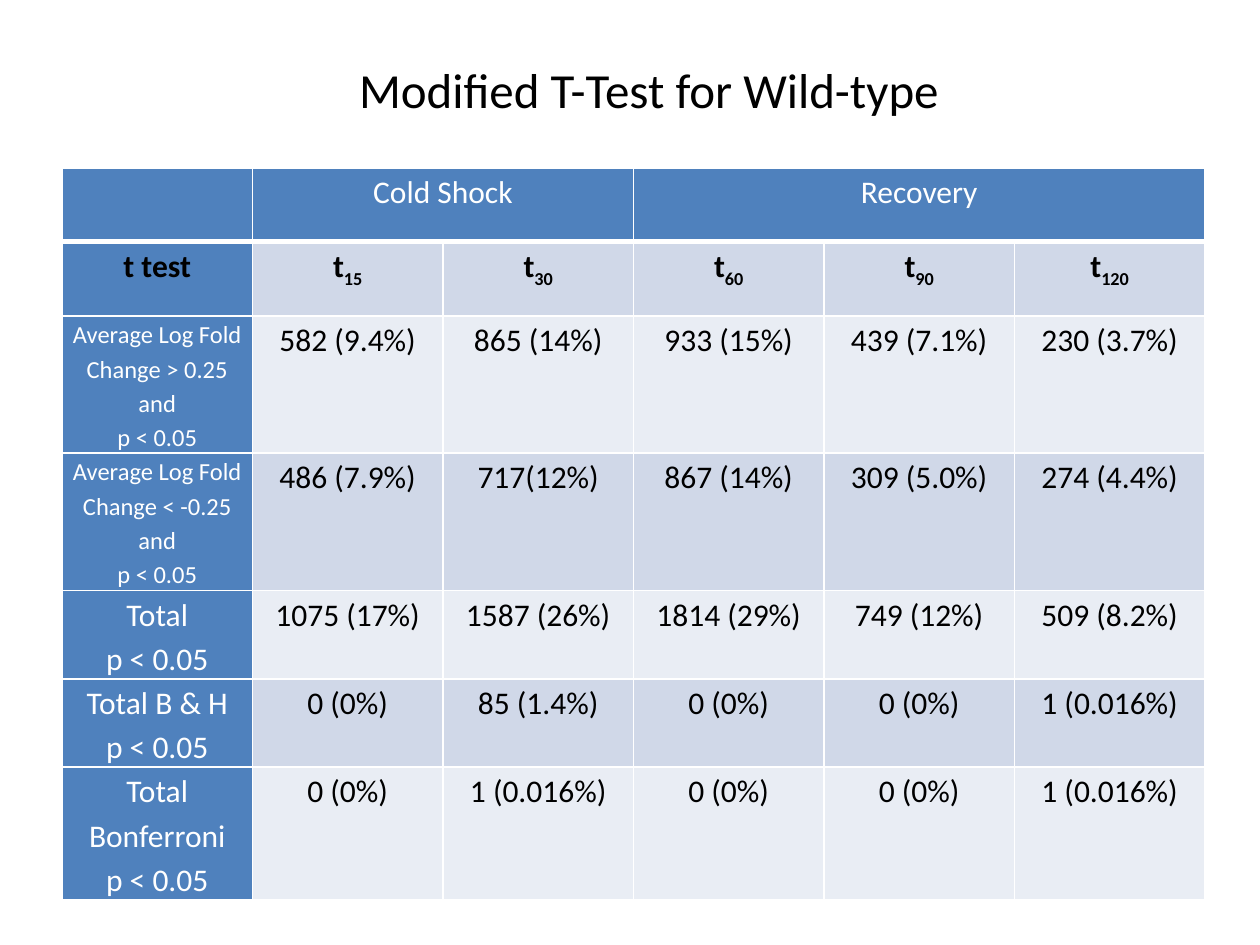
"""Build a slide with a table of modified t-test results for wild-type."""
from lxml import etree
from pptx import Presentation
from pptx.dml.color import RGBColor
from pptx.enum.text import MSO_AUTO_SIZE, PP_ALIGN
from pptx.oxml.ns import qn
from pptx.util import Cm, Pt

CENTER = PP_ALIGN.CENTER
FIT_SHAPE = MSO_AUTO_SIZE.SHAPE_TO_FIT_TEXT
WHITE = RGBColor(0xFF, 0xFF, 0xFF)
BLACK = RGBColor(0x00, 0x00, 0x00)
BLUE = RGBColor(0x4F, 0x81, 0xBD)
BANDS = (RGBColor(0xE9, 0xED, 0xF4), RGBColor(0xD0, 0xD8, 0xE8))
FONT = "Calibri"

COLUMN_WIDTH = Cm(3.84)
ROW_HEIGHTS = [Cm(h) for h in (1.48, 1.5, 2.72, 2.72, 1.75, 1.75, 2.62)]
PHASES = [("Cold Shock", 1, 2), ("Recovery", 3, 5)]
TIMES = ["15", "30", "60", "90", "120"]
RESULTS = [
    ("Average Log Fold Change > 0.25 and", 14,
     ["582 (9.4%)", "865 (14%)", "933 (15%)", "439 (7.1%)", "230 (3.7%)"]),
    ("Average Log Fold Change < -0.25 and", 14,
     ["486 (7.9%)", "717(12%)", "867 (14%)", "309 (5.0%)", "274 (4.4%)"]),
    ("Total", 18,
     ["1075 (17%)", "1587 (26%)", "1814 (29%)", "749 (12%)", "509 (8.2%)"]),
    ("Total B & H", 18,
     ["0 (0%)", "85 (1.4%)", "0 (0%)", "0 (0%)", "1 (0.016%)"]),
    ("Total Bonferroni", 18,
     ["0 (0%)", "1 (0.016%)", "0 (0%)", "0 (0%)", "1 (0.016%)"]),
]


def style_paragraph(paragraph, size, color, bold=False):
    """Set the font of a whole paragraph."""
    font = paragraph.font
    font.name, font.size, font.bold = FONT, Pt(size), bold
    font.color.rgb = color


def draw_borders(cell, bottom_width):
    """Give a cell white borders."""
    properties = cell._tc.get_or_add_tcPr()
    for side, width in (("L", 1), ("R", 1), ("T", 1), ("B", bottom_width)):
        line = etree.SubElement(properties, qn(f"a:ln{side}"), w=str(Pt(width)))
        fill = etree.SubElement(line, qn("a:solidFill"))
        etree.SubElement(fill, qn("a:srgbClr"), val=str(WHITE))


def format_grid(table):
    """Size the table and set the fill, borders and margins of its cells."""
    for column in table.columns:
        column.width = COLUMN_WIDTH
    for row_index, (row, height) in enumerate(zip(table.rows, ROW_HEIGHTS)):
        row.height = height
        for column_index, cell in enumerate(row.cells):
            heading = row_index == 0 or column_index == 0
            draw_borders(cell, 3 if row_index == 0 else 1)
            cell.fill.solid()
            cell.fill.fore_color.rgb = BLUE if heading else BANDS[row_index % 2]
            cell.margin_left = cell.margin_right = Cm(0.18)
            cell.margin_top = cell.margin_bottom = 0


def write_cell(cell, text, color=BLACK, size=18, bold=False):
    """Write centred text in a cell, one paragraph for each line."""
    cell.text = text
    for paragraph in cell.text_frame.paragraphs:
        paragraph.alignment = CENTER
        paragraph.line_spacing = 1.15
        style_paragraph(paragraph, size, color, bold)


def write_time(cell, minutes):
    """Write a time point with its minutes as a subscript."""
    write_cell(cell, "t", bold=True)
    subscript = cell.text_frame.paragraphs[0].add_run()
    subscript.text = minutes
    subscript.font._element.set("baseline", "-25000")


def add_results_table(slide):
    """Add the table of significant gene counts."""
    table = slide.shapes.add_table(
        len(ROW_HEIGHTS), len(TIMES) + 1, Cm(1.25), Cm(3.39),
        COLUMN_WIDTH * (len(TIMES) + 1), sum(ROW_HEIGHTS)).table
    format_grid(table)
    for phase, first, last in PHASES:
        table.cell(0, first).merge(table.cell(0, last))
        write_cell(table.cell(0, first), phase, WHITE)
    write_cell(table.cell(1, 0), "t test", bold=True)
    for column, minutes in enumerate(TIMES, 1):
        write_time(table.cell(1, column), minutes)
    for row, (criterion, size, counts) in enumerate(RESULTS, 2):
        write_cell(table.cell(row, 0), f"{criterion}\np < 0.05", WHITE, size)
        for column, count in enumerate(counts, 1):
            write_cell(table.cell(row, column), count)


def add_title(slide):
    """Add the slide title."""
    title = slide.shapes.add_textbox(Cm(6.99), Cm(1.07), Cm(12.32), Cm(1.45))
    frame = title.text_frame
    frame.word_wrap = False
    frame.auto_size = FIT_SHAPE
    frame.text = "Modified T-Test for Wild-type"
    style_paragraph(frame.paragraphs[0], 28, BLACK)


def main():
    """Build and save the presentation."""
    presentation = Presentation()
    presentation.slide_width, presentation.slide_height = Cm(25.4), Cm(19.05)
    slide = presentation.slides.add_slide(presentation.slide_layouts[6])
    add_results_table(slide)
    add_title(slide)
    presentation.save("out.pptx")


if __name__ == "__main__":
    main()
